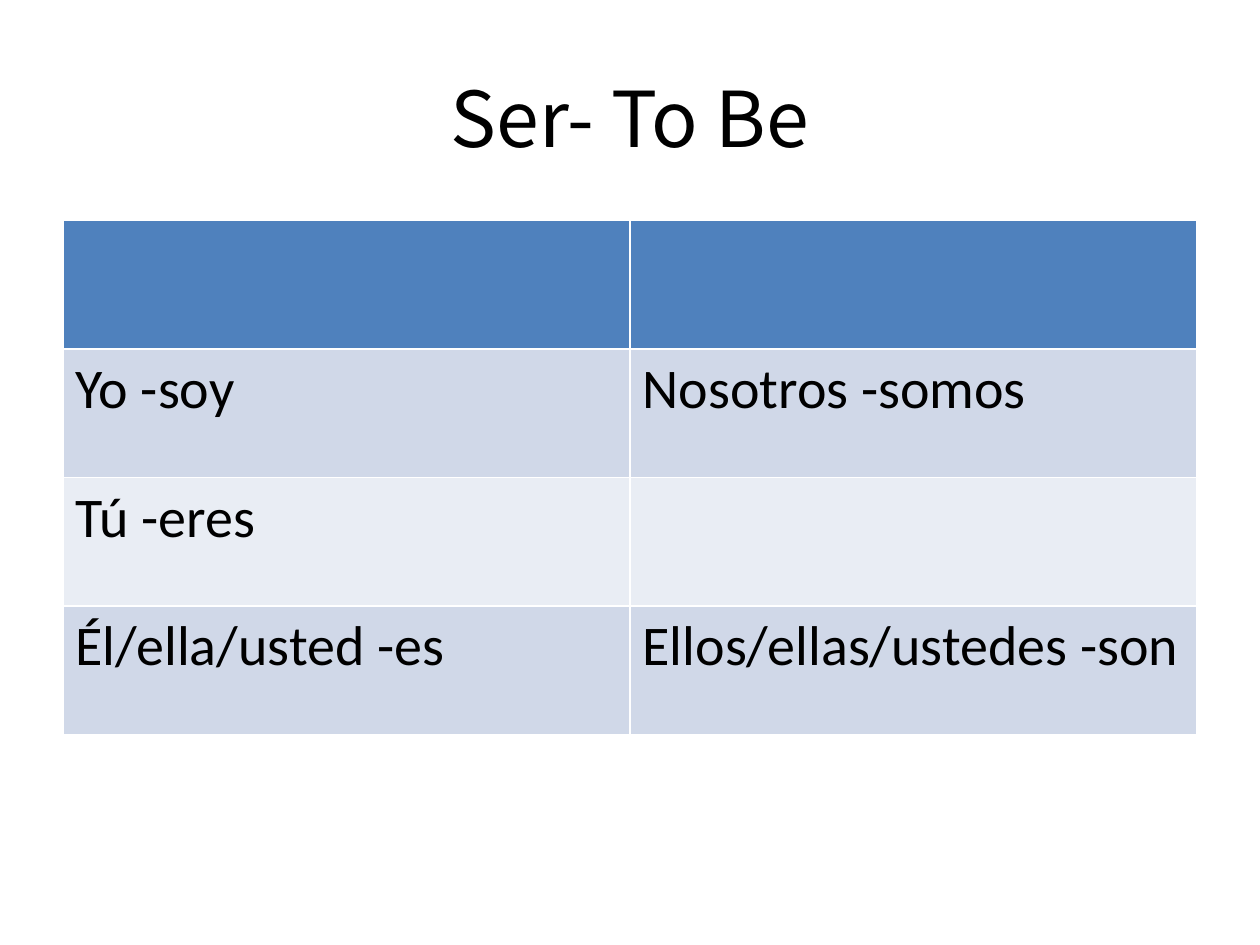
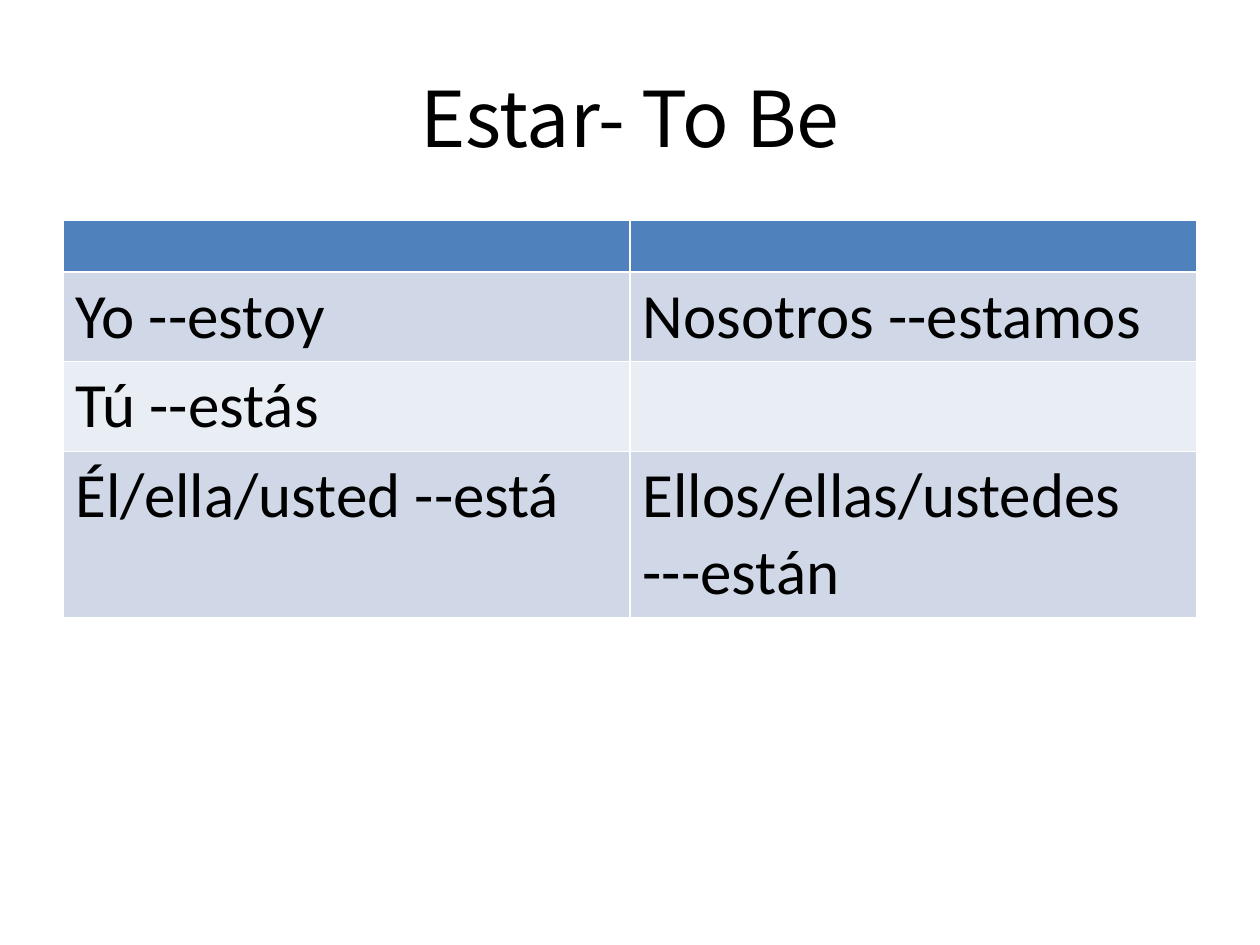
from pptx import Presentation
from pptx.dml.color import RGBColor
from pptx.enum.text import MSO_ANCHOR, PP_ALIGN
from pptx.util import Cm, Pt

MIDDLE = MSO_ANCHOR.MIDDLE
CENTER = PP_ALIGN.CENTER

BLACK = RGBColor(0x00, 0x00, 0x00)
HEADER_BLUE = RGBColor(0x4F, 0x81, 0xBD)
BAND_DARK = RGBColor(0xD0, 0xD8, 0xE8)
BAND_LIGHT = RGBColor(0xE9, 0xED, 0xF4)
ROW_FILLS = [HEADER_BLUE, BAND_DARK, BAND_LIGHT, BAND_DARK]

TITLE_FONT = "Noto Sans CJK KR"
TABLE_FONT = "Calibri"
LEFT, WIDTH = Cm(1.27), Cm(22.86)

# Title, text size, row height in cm, and rows below the empty header
VERBS = [
    ("Ser- To Be", 32, 2.59, [
        ("Yo -soy", "Nosotros -somos"),
        ("Tú -eres", ""),
        ("Él/ella/usted -es", "Ellos/ellas/ustedes -son"),
    ]),
    ("Estar- To Be", 36, 1.03, [
        ("Yo --estoy", "Nosotros --estamos"),
        ("Tú --estás", ""),
        ("Él/ella/usted --está", "Ellos/ellas/ustedes ---están"),
    ]),
]

deck = Presentation()
deck.slide_width, deck.slide_height = Cm(25.4), Cm(19.05)
title_only = deck.slide_layouts[5]

for heading, text_size, row_height, forms in VERBS:
    page = deck.slides.add_slide(title_only)

    # Title
    title = page.shapes.title
    title.left, title.top, title.width, title.height = LEFT, Cm(0.76), WIDTH, Cm(3.18)
    title.text_frame.text = heading
    title.text_frame.vertical_anchor = MIDDLE
    para = title.text_frame.paragraphs[0]
    para.alignment = CENTER
    para.font.name = TITLE_FONT
    para.font.size = Pt(44)
    para.font.color.rgb = BLACK

    # Conjugation table; the default style draws the white rules
    rows = [("", "")] + forms
    table = page.shapes.add_table(
        len(rows), 2, LEFT, Cm(4.45), WIDTH, Cm(row_height * len(rows))).table
    for row, words, fill in zip(table.rows, rows, ROW_FILLS):
        row.height = Cm(row_height)
        for cell, word in zip(row.cells, words):
            cell.fill.solid()
            cell.fill.fore_color.rgb = fill
            if word:
                cell.text = word
                para = cell.text_frame.paragraphs[0]
                para.font.name = TABLE_FONT
                para.font.size = Pt(text_size)
                para.font.color.rgb = BLACK

deck.save("out.pptx")
